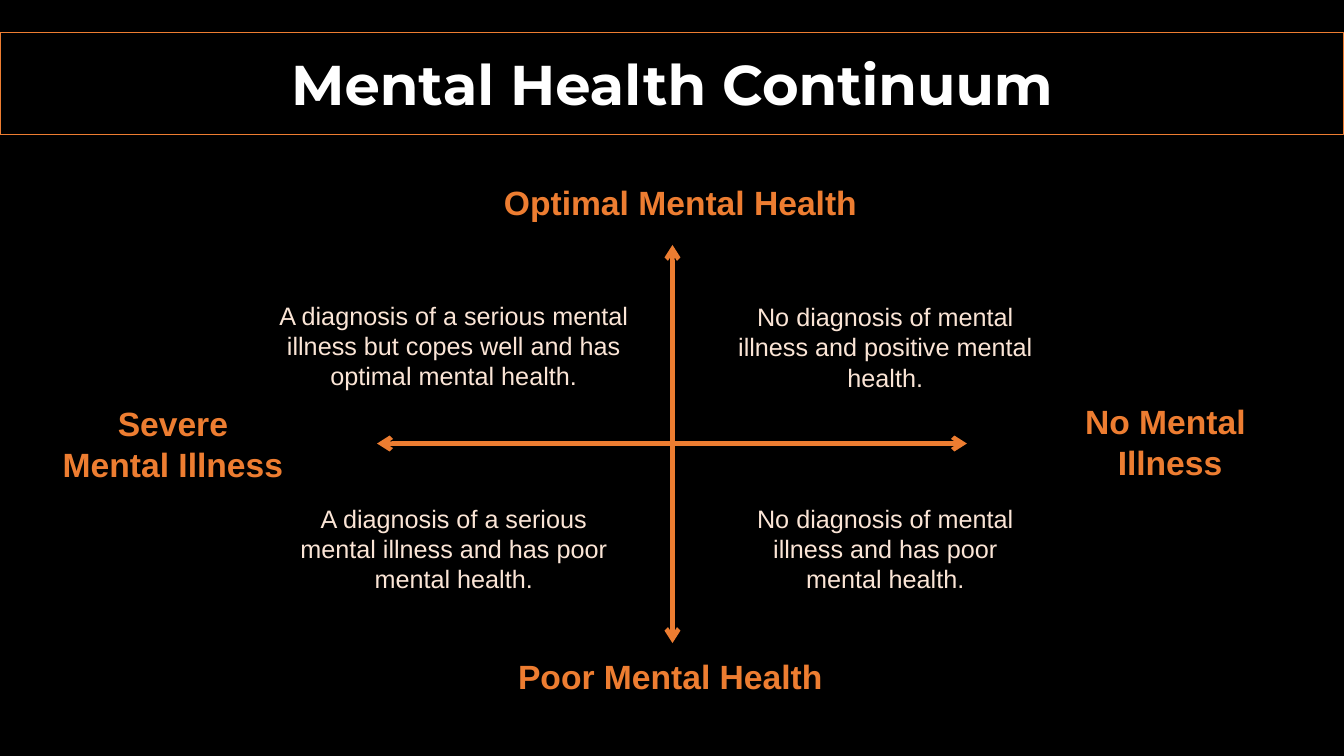
from lxml.etree import SubElement
from pptx import Presentation
from pptx.dml.color import RGBColor
from pptx.enum.shapes import MSO_CONNECTOR
from pptx.enum.text import MSO_ANCHOR, MSO_AUTO_SIZE, PP_ALIGN
from pptx.oxml.ns import qn
from pptx.util import Inches, Pt

BLACK = RGBColor(0x00, 0x00, 0x00)
WHITE = RGBColor(0xFF, 0xFF, 0xFF)
ORANGE = RGBColor(0xED, 0x7D, 0x31)
PEACH = RGBColor(0xFB, 0xE5, 0xD6)

SLIDE_WIDTH, SLIDE_HEIGHT = 13.33, 7.5

# Ends of the axes: left, top, width, height, lines, alignment, wrap
AXIS_LABELS = [
    (4.9, 1.76, 3.73, 0.5, ["Optimal Mental Health"], PP_ALIGN.LEFT, False),
    (5.04, 6.46, 3.25, 0.5, ["Poor Mental Health"], PP_ALIGN.LEFT, False),
    (0.51, 3.95, 2.41, 0.91, ["Severe", "Mental Illness"], PP_ALIGN.CENTER, False),
    (10.39, 3.93, 2.43, 0.91, ["No Mental ", "Illness"], PP_ALIGN.CENTER, True),
]

# Quadrants: left, top, width, text
QUADRANTS = [
    (2.62, 2.93, 3.76, "A diagnosis of a serious mental illness but copes well "
                       "and has optimal mental health."),
    (7.17, 2.94, 3.22, "No diagnosis of mental illness and positive mental health."),
    (2.69, 4.94, 3.62, "A diagnosis of a serious mental illness and has poor mental health."),
    (7.17, 4.94, 3.22, "No diagnosis of mental illness and has poor mental health."),
]
QUADRANT_HEIGHT = 1.01


def style_paragraph(paragraph, font_name, size, color, bold, alignment):
    paragraph.alignment = alignment
    font = paragraph.font
    font.name, font.size, font.bold = font_name, Pt(size), bold
    font.color.rgb = color


def add_title(slide, text):
    title = slide.shapes.title
    title.left, title.top = Inches(0), Inches(0.32)
    title.width, title.height = Inches(SLIDE_WIDTH), Inches(1.01)
    title.line.color.rgb = ORANGE
    title.line.width = Pt(0.75)
    frame = title.text_frame
    frame.text = text
    frame.auto_size = MSO_AUTO_SIZE.NONE
    frame.vertical_anchor = MSO_ANCHOR.MIDDLE
    style_paragraph(frame.paragraphs[0], "Montserrat", 40, WHITE, True, PP_ALIGN.CENTER)


def add_axis(group, start_x, start_y, end_x, end_y):
    axis = group.shapes.add_connector(
        MSO_CONNECTOR.STRAIGHT,
        Inches(start_x), Inches(start_y), Inches(end_x), Inches(end_y))
    axis.line.color.rgb = ORANGE
    axis.line.width = Pt(3.25)
    outline = axis.line._get_or_add_ln()
    for arrowhead in ("a:headEnd", "a:tailEnd"):
        SubElement(outline, qn(arrowhead), type="arrow")
    SubElement(axis._element.spPr, qn("a:effectLst"))


def add_text(slide, left, top, width, height, lines, size, color,
             bold=False, alignment=PP_ALIGN.CENTER, wrap=True):
    box = slide.shapes.add_textbox(
        Inches(left), Inches(top), Inches(width), Inches(height))
    frame = box.text_frame
    frame.word_wrap = wrap
    frame.auto_size = MSO_AUTO_SIZE.SHAPE_TO_FIT_TEXT
    frame.text = "\n".join(lines)
    for paragraph in frame.paragraphs:
        style_paragraph(paragraph, "Arial", size, color, bold, alignment)


def main():
    presentation = Presentation()
    presentation.slide_width = Inches(SLIDE_WIDTH)
    presentation.slide_height = Inches(SLIDE_HEIGHT)
    slide = presentation.slides.add_slide(
        presentation.slide_layouts.get_by_name("Title Only"))
    slide.background.fill.solid()
    slide.background.fill.fore_color.rgb = BLACK

    add_title(slide, "Mental Health Continuum")

    # Crossed axes
    axes = slide.shapes.add_group_shape()
    add_axis(axes, 3.74, 4.4, 9.59, 4.4)
    add_axis(axes, 6.67, 6.38, 6.67, 2.43)

    # Labels at the ends of the axes
    for left, top, width, height, lines, alignment, wrap in AXIS_LABELS:
        add_text(slide, left, top, width, height, lines, 24, ORANGE,
                 bold=True, alignment=alignment, wrap=wrap)

    # Quadrant descriptions
    for left, top, width, description in QUADRANTS:
        add_text(slide, left, top, width, QUADRANT_HEIGHT, [description], 18, PEACH)

    presentation.save("out.pptx")


if __name__ == "__main__":
    main()
